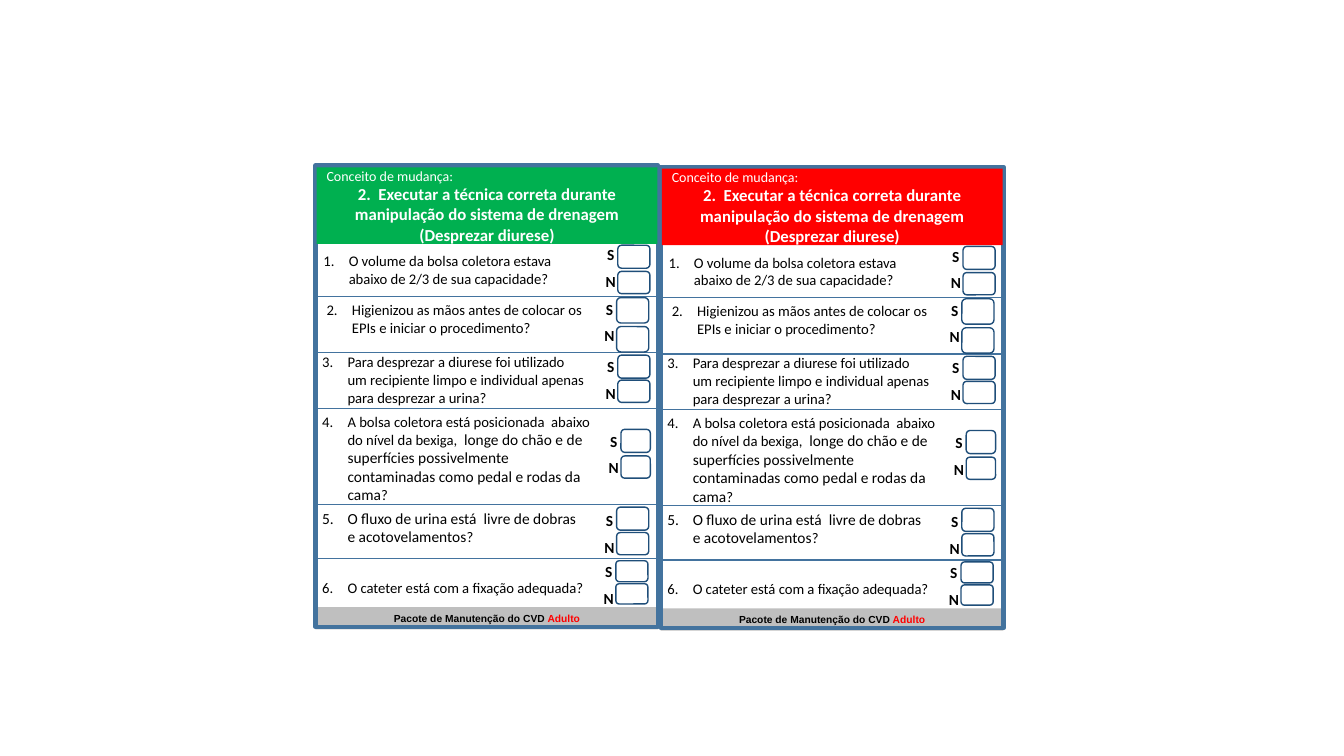
from lxml import etree
from pptx import Presentation
from pptx.dml.color import RGBColor
from pptx.enum.shapes import MSO_CONNECTOR, MSO_SHAPE
from pptx.enum.text import MSO_ANCHOR, PP_ALIGN
from pptx.oxml.ns import qn
from pptx.util import Cm, Pt

BLACK = RGBColor(0x00, 0x00, 0x00)
WHITE = RGBColor(0xFF, 0xFF, 0xFF)
RED = RGBColor(0xFF, 0x00, 0x00)
GREEN = RGBColor(0x00, 0xB0, 0x50)
GRAY = RGBColor(0xBF, 0xBF, 0xBF)
BORDER_BLUE = RGBColor(0x43, 0x73, 0x9E)
BOX_BLUE = RGBColor(0x1F, 0x4E, 0x79)

# Content: runs are (text, size in points)
HEADER = [
    ("Conceito de mudança:", 10),
    ("2.  Executar a técnica correta durante manipulação do sistema de drenagem", 12),
    ("(Desprezar diurese)", 12),
]
FOOTER = [("Pacote de Manutenção do CVD ", BLACK), ("Adulto", RED)]

# Lengths in cm, relative to the card:
# text area (left, top, width, height), box (left, width),
# then for S and N (box top, box height, letter centre)
QUESTIONS = [
    ([("O volume da bolsa coletora estava abaixo de 2/3 de sua capacidade?", 10.5)],
     (-0.05, 1.98, 7.11, 1.3), (7.62, 0.81), [(2.01, 0.58, 2.25), (2.67, 0.56, 2.92)]),
    ([("Higienizou as mãos antes de colocar os EPIs e iniciar o procedimento?", 10.5)],
     (0.03, 3.15, 7.11, 1.42), (7.59, 0.81), [(3.33, 0.64, 3.63), (4.06, 0.64, 4.27)]),
    ([("Para desprezar a diurese foi utilizado um recipiente limpo e individual "
       "apenas para desprezar a urina?", 10.5)],
     (-0.08, 4.62, 7.11, 1.55), (7.62, 0.81), [(4.78, 0.58, 5.07), (5.41, 0.56, 5.74)]),
    ([("A bolsa coletora está posicionada  abaixo do nível da bexiga, ", 10.5),
      (" longe do chão e de superfícies possivelmente contaminadas como "
       "pedal e rodas da cama", 11), ("?", 10.5)],
     (-0.08, 6.32, 7.47, 2.11), (7.7, 0.74), [(6.65, 0.58, 6.95), (7.32, 0.56, 7.62)]),
    ([("O fluxo de urina está  livre de dobras e acotovelamentos", 11), ("?", 10.5)],
     (-0.08, 8.41, 7.11, 1.42), (7.59, 0.81), [(8.61, 0.58, 8.95), (9.25, 0.56, 9.63)]),
    ([("O cateter está com a fixação adequada?", 10.5)],
     (-0.08, 9.98, 7.11, 1.3), (7.57, 0.81), [(9.96, 0.53, 10.22), (10.54, 0.51, 10.9)]),
]
DIVIDERS = [3.3, 4.72, 6.12, 8.54, 9.91]
CARDS = [(16.65, 4.2, RED), (7.95, 4.17, GREEN)]
CARD_WIDTH, CARD_HEIGHT = 8.64, 11.63
LETTER_WIDTH, LETTER_HEIGHT, LETTER_SHIFT = 0.61, 0.4, 0.18
NUMBER_INDENT = 0.64

presentation = Presentation()
presentation.slide_width, presentation.slide_height = Cm(33.87), Cm(19.05)
slide = presentation.slides.add_slide(presentation.slide_layouts[6])


def add_box(kind, left, top, width, height, fill=None, line=None, line_width=1):
    shape = slide.shapes.add_shape(kind, Cm(left), Cm(top), Cm(width), Cm(height))
    shape.shadow.inherit = False
    if fill is None:
        shape.fill.background()
    else:
        shape.fill.solid()
        shape.fill.fore_color.rgb = fill
    if line is None:
        shape.line.fill.background()
    else:
        shape.line.color.rgb = line
        shape.line.width = Pt(line_width)
    return shape


def prepare_text(shape, inset=None):
    frame = shape.text_frame
    frame.word_wrap = True
    frame.vertical_anchor = MSO_ANCHOR.MIDDLE
    if inset is not None:
        frame.margin_left = frame.margin_right = Cm(inset)
        frame.margin_top = frame.margin_bottom = Cm(inset)
    return frame


def add_text(left, top, width, height, inset=None):
    shape = slide.shapes.add_textbox(Cm(left), Cm(top), Cm(width), Cm(height))
    return prepare_text(shape, inset)


def style(run, size, color=BLACK, bold=False, font="Calibri"):
    run.font.name, run.font.size, run.font.bold = font, Pt(size), bold
    run.font.color.rgb = color


def add_run(paragraph, text, *args, **kwargs):
    run = paragraph.add_run()
    run.text = text
    style(run, *args, **kwargs)


def number_paragraph(paragraph, number):
    properties = paragraph._p.get_or_add_pPr()
    properties.set("marL", str(Cm(NUMBER_INDENT)))
    properties.set("indent", str(-Cm(NUMBER_INDENT)))
    bullet = etree.SubElement(properties, qn("a:buAutoNum"), type="arabicPeriod")
    if number > 1:
        bullet.set("startAt", str(number))


def add_divider(left, top):
    line = slide.shapes.add_connector(
        MSO_CONNECTOR.STRAIGHT, Cm(left), Cm(top), Cm(left + CARD_WIDTH), Cm(top))
    line.line.color.rgb = BORDER_BLUE
    line.line.width = Pt(1)
    etree.SubElement(line._element.spPr, qn("a:effectLst"))


def add_question(left, top, number, question):
    runs, (text_left, text_top, width, height), (box_left, box_width), answers = question
    frame = add_text(left + text_left, top + text_top, width, height)
    paragraph = frame.paragraphs[0]
    number_paragraph(paragraph, number)
    for text, size in runs:
        add_run(paragraph, text, size)
    # Answer boxes with their letters
    for letter, (box_top, box_height, centre) in zip("SN", answers):
        add_box(MSO_SHAPE.ROUNDED_RECTANGLE, left + box_left, top + box_top,
                box_width, box_height, line=BOX_BLUE)
        frame = add_text(left + box_left - LETTER_SHIFT - LETTER_WIDTH / 2,
                         top + centre - LETTER_HEIGHT / 2,
                         LETTER_WIDTH, LETTER_HEIGHT, inset=0)
        frame.text = letter
        frame.paragraphs[0].alignment = PP_ALIGN.CENTER
        style(frame.paragraphs[0].runs[0], 11, bold=True)


def add_card(left, top, color):
    # Footer strip and border
    footer = add_box(MSO_SHAPE.RECTANGLE, left, top + 11.13, CARD_WIDTH, 0.56, fill=GRAY)
    paragraph = prepare_text(footer, inset=0).paragraphs[0]
    paragraph.alignment = PP_ALIGN.CENTER
    for text, text_color in FOOTER:
        add_run(paragraph, text, 7.3, text_color, bold=True, font="Arial")
    add_box(MSO_SHAPE.RECTANGLE, left, top, CARD_WIDTH, CARD_HEIGHT,
            line=BORDER_BLUE, line_width=3)
    # Header
    header = add_box(MSO_SHAPE.RECTANGLE, left + 0.03, top + 0.05, 8.59, 1.93, fill=color)
    frame = prepare_text(header)
    frame.text = "\n".join(text for text, size in HEADER)
    for index, (paragraph, (text, size)) in enumerate(zip(frame.paragraphs, HEADER)):
        paragraph.alignment = PP_ALIGN.CENTER if index else PP_ALIGN.LEFT
        style(paragraph.runs[0], size, WHITE, bold=index > 0)
    # Questions
    for divider_top in DIVIDERS:
        add_divider(left, top + divider_top)
    for number, question in enumerate(QUESTIONS, start=1):
        add_question(left, top, number, question)


for card in CARDS:
    add_card(*card)

presentation.save("out.pptx")
